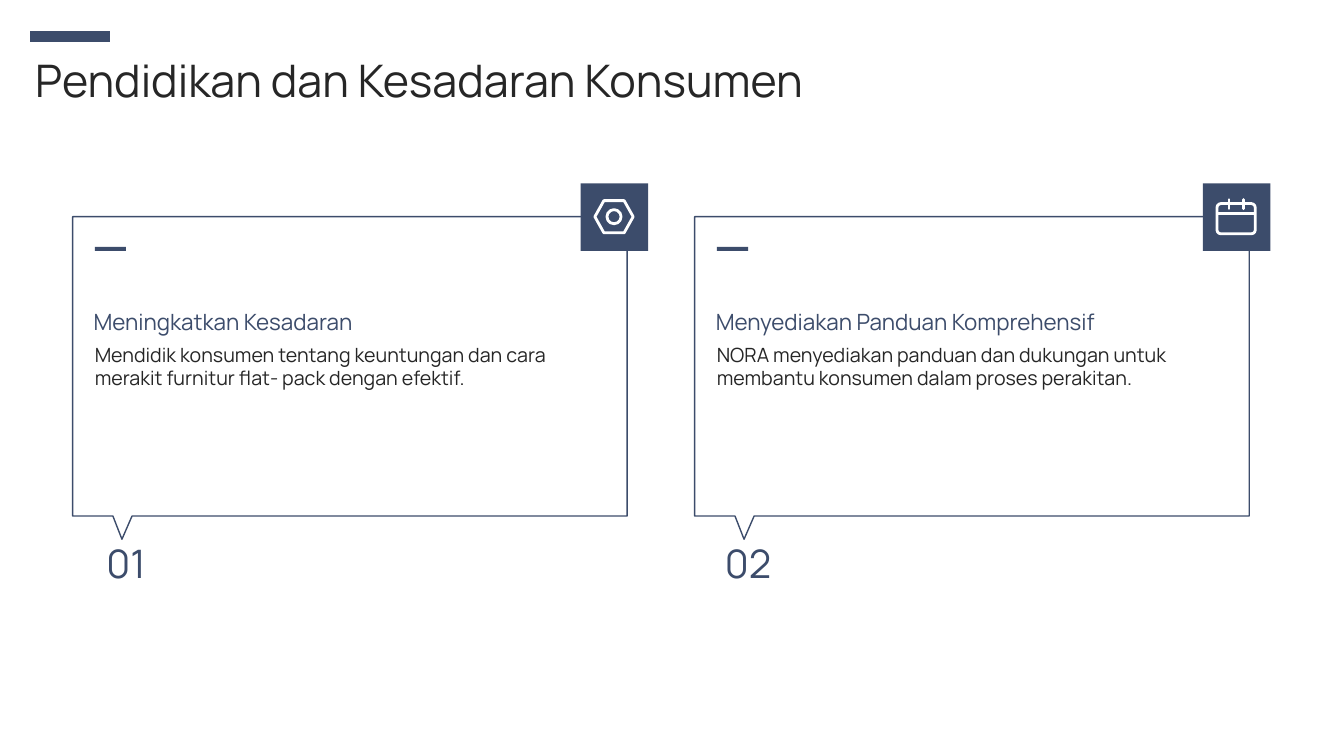
from pptx import Presentation
from pptx.dml.color import RGBColor
from pptx.enum.shapes import MSO_CONNECTOR, MSO_SHAPE
from pptx.enum.text import MSO_ANCHOR, PP_ALIGN
from pptx.oxml.ns import qn
from pptx.util import Inches, Pt

NAVY = RGBColor(0x3C, 0x4C, 0x6B)
INK = RGBColor(0x26, 0x26, 0x26)
WHITE = RGBColor(0xFF, 0xFF, 0xFF)
FONT = "Manrope"

STRAIGHT = MSO_CONNECTOR.STRAIGHT
RECTANGLE, OVAL = MSO_SHAPE.RECTANGLE, MSO_SHAPE.OVAL
HEXAGON, ROUNDED = MSO_SHAPE.HEXAGON, MSO_SHAPE.ROUNDED_RECTANGLE
TOP, MIDDLE, BOTTOM = MSO_ANCHOR.TOP, MSO_ANCHOR.MIDDLE, MSO_ANCHOR.BOTTOM
LEFT, CENTER = PP_ALIGN.LEFT, PP_ALIGN.CENTER

CARD_LEFT, CARD_TOP, CARD_STEP = 0.72, 2.15, 6.17
ICON_STROKE = 2
# Card outline with its pointer, measured from the card's top left corner
CARD_OUTLINE = [(0, 0), (5.5, 0), (5.5, 2.97), (0.59, 2.97),
                (0.49, 3.2), (0.4, 2.97), (0, 2.97)]


def style_shape(shape, fill=None, line=None, width=1):
    shape.shadow.inherit = False
    if fill is None:
        shape.fill.background()
    else:
        shape.fill.solid()
        shape.fill.fore_color.rgb = fill
    if line is None:
        shape.line.fill.background()
    else:
        shape.line.color.rgb = line
        shape.line.width = Pt(width)


def add_text(page, text, place, size, color, anchor=TOP, align=LEFT):
    box = page.shapes.add_textbox(*map(Inches, place))
    frame = box.text_frame
    frame_format = {"word_wrap": True, "vertical_anchor": anchor,
                    "margin_left": 0, "margin_right": 0,
                    "margin_top": 0, "margin_bottom": 0}
    for name, value in frame_format.items():
        setattr(frame, name, value)
    para = frame.paragraphs[0]
    para.alignment = align
    span = para.add_run()
    span.text = text
    for name, value in {"name": FONT, "size": Pt(size)}.items():
        setattr(span.font, name, value)
    span.font.color.rgb = color


def add_preset(page, kind, place, **style):
    shape = page.shapes.add_shape(kind, *map(Inches, place))
    style_shape(shape, **style)
    return shape


def add_line(page, start, end, color, width, cap):
    line = page.shapes.add_connector(STRAIGHT, *map(Inches, start + end))
    line.line.color.rgb = color
    line.line.width = Pt(width)
    line.line._get_or_add_ln().set("cap", cap)
    properties = line._element.spPr
    properties.append(properties.makeelement(qn("a:effectLst"), {}))


def draw_nut(page, x, y):
    """Hexagonal nut centred on x, y."""
    stroke = {"line": WHITE, "width": ICON_STROKE}
    nut = add_preset(page, HEXAGON, (x - 0.19, y - 0.16, 0.38, 0.32), **stroke)
    nut.adjustments[0] = 0.28
    add_preset(page, OVAL, (x - 0.07, y - 0.07, 0.14, 0.14), **stroke)


def draw_calendar(page, x, y):
    """Calendar sheet with two rings, centred on x, y."""
    sheet = add_preset(page, ROUNDED, (x - 0.19, y - 0.13, 0.38, 0.3),
                       line=WHITE, width=ICON_STROKE)
    sheet.adjustments[0] = 0.13
    add_line(page, (x - 0.19, y - 0.03), (x + 0.19, y - 0.03),
             WHITE, ICON_STROKE, "flat")
    for ring in (x - 0.07, x + 0.07):
        add_line(page, (ring, y - 0.17), (ring, y - 0.08),
                 WHITE, ICON_STROKE, "rnd")


def add_card(page, left, number, heading, body, draw_icon):
    # Frame with pointer
    points = [(Inches(left + x), Inches(CARD_TOP + y)) for x, y in CARD_OUTLINE]
    builder = page.shapes.build_freeform(*points[0])
    builder.add_line_segments(points[1:], close=True)
    style_shape(builder.convert_to_shape(), fill=WHITE, line=NAVY)

    # Icon tile
    add_preset(page, RECTANGLE, (left + 5.04, 1.82, 0.67, 0.67), fill=NAVY)
    draw_icon(page, left + 5.37, 2.15)

    # Accent and text
    add_preset(page, RECTANGLE, (left + 0.22, 2.45, 0.31, 0.04), fill=NAVY)
    add_text(page, heading, (left + 0.21, 2.54, 5.07, 0.78), 16, NAVY, BOTTOM)
    add_text(page, body, (left + 0.22, 3.4, 5.06, 1.58), 14, INK)
    add_text(page, number, (left + 0.21, 5.35, 0.64, 0.52), 28, NAVY,
             align=CENTER)


def main():
    deck = Presentation()
    deck.slide_width, deck.slide_height = Inches(13.33), Inches(7.5)
    page = deck.slides.add_slide(deck.slide_layouts[6])

    # Cards
    cards = [
        ("Meningkatkan Kesadaran",
         "Mendidik konsumen tentang keuntungan dan cara merakit furnitur "
         "flat- pack dengan efektif.", draw_nut),
        ("Menyediakan Panduan Komprehensif",
         "NORA menyediakan panduan dan dukungan untuk membantu konsumen "
         "dalam proses perakitan.", draw_calendar),
    ]
    for index, card in enumerate(cards):
        add_card(page, CARD_LEFT + index * CARD_STEP, f"{index + 1:02}", *card)

    # Title with accent bar
    add_text(page, "Pendidikan dan Kesadaran Konsumen",
             (0.35, 0.55, 12.2, 0.47), 32, INK, MIDDLE)
    add_line(page, (0.35, 0.36), (1.04, 0.36), NAVY, 8, "sq")

    deck.save("out.pptx")


if __name__ == "__main__":
    main()
